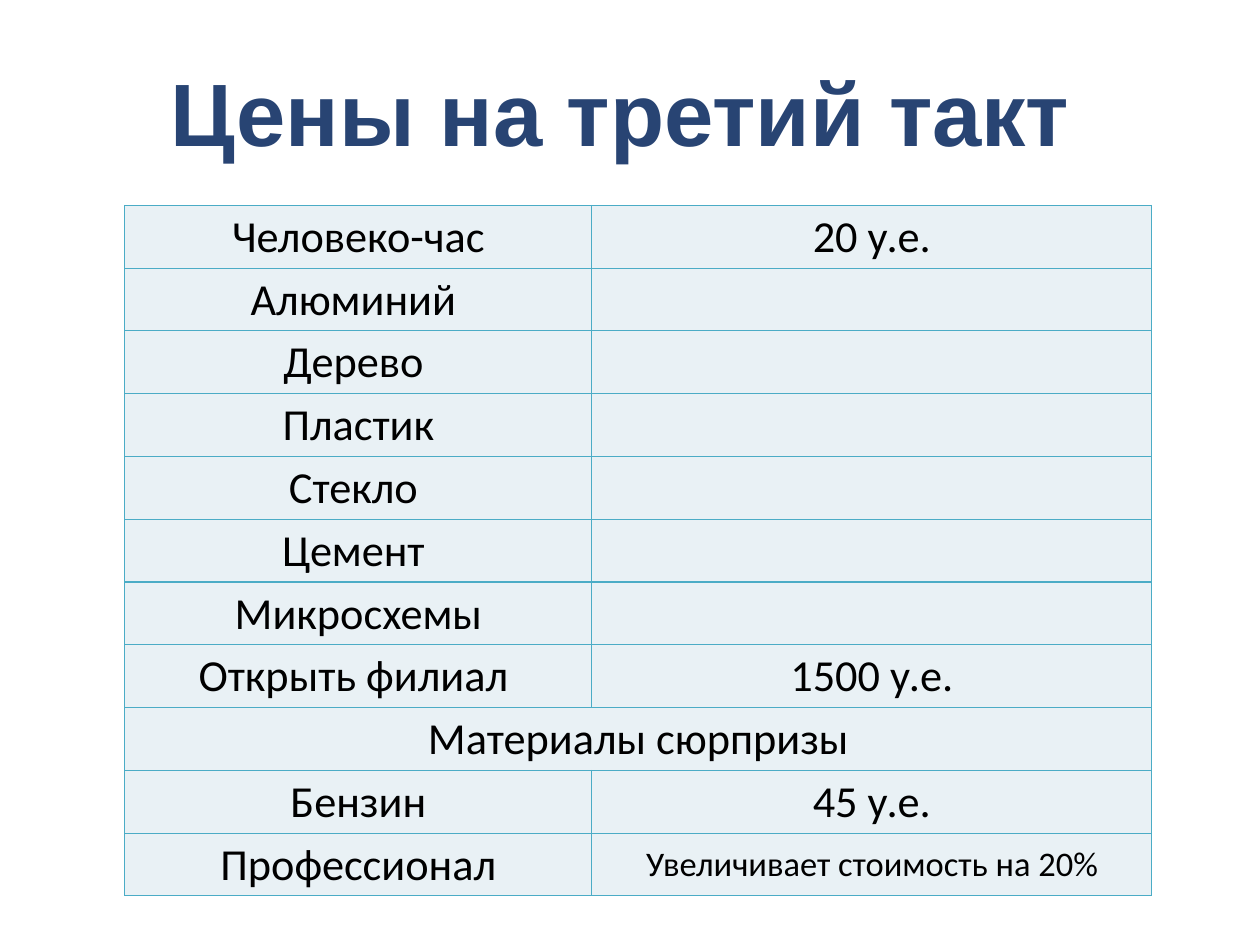
from lxml.etree import SubElement as Sub
from pptx import Presentation
from pptx.dml.color import RGBColor as Rgb
from pptx.enum.text import MSO_ANCHOR as Anchor, MSO_AUTO_SIZE as Fit, PP_ALIGN as Align
from pptx.oxml.ns import qn
from pptx.util import Cm, Pt

COLORS = {"title": "284473", "text": "000000", "cell": "E9F1F5", "line": "4BACC6"}

# Each row holds a good and its price; a row of one text spans the table
PRICES = [
    ("Человеко-час", "20 у.е."),
    ("Алюминий ", ""),
    ("Дерево ", ""),
    ("Пластик", ""),
    ("Стекло ", ""),
    ("Цемент ", ""),
    ("Микросхемы", ""),
    ("Открыть филиал ", "1500 у.е."),
    ("Материалы сюрпризы",),
    ("Бензин", "45 у.е."),
    ("Профессионал", "Увеличивает стоимость на 20%"),
]
WIDTHS = (13.39, 16.05)
ROW = 1.8
NOTE = PRICES[-1][1]


def color(name):
    return Rgb.from_string(COLORS[name])


def write(frame, text, size=36, face="Calibri", tone="text", bold=False):
    para = frame.paragraphs[0]
    para.alignment = Align.CENTER
    run = para.add_run()
    run.text = text
    font = run.font
    font.size, font.name, font.bold = Pt(size), face, bold
    font.color.rgb = color(tone)


def pad(box, side, top, base):
    box.margin_left = box.margin_right = Cm(side)
    box.margin_top, box.margin_bottom = Cm(top), Cm(base)
    box.vertical_anchor = Anchor.MIDDLE


def border(cell):
    props = cell._tc.get_or_add_tcPr()
    for side in ("lnL", "lnR", "lnT", "lnB"):
        line = Sub(props, qn(f"a:{side}"), w=str(Pt(1)))
        fill = Sub(line, qn("a:solidFill"))
        Sub(fill, qn("a:srgbClr"), val=COLORS["line"])


def style(cell):
    pad(cell, 0.03, 0.03, 0)
    border(cell)
    cell.fill.solid()
    cell.fill.fore_color.rgb = color("cell")


def add_title(slide, text):
    title = slide.shapes.title
    title.left, title.top = Cm(2.72), Cm(0.79)
    title.width, title.height = Cm(30.84), Cm(4.78)
    frame = title.text_frame
    frame.auto_size = Fit.NONE
    pad(frame, 0.36, 0.18, 0.18)
    write(frame, text, size=72, face="Arial", tone="title", bold=True)


def add_prices(slide):
    count = len(PRICES)
    table = slide.shapes.add_table(
        count, len(WIDTHS), Cm(3.58), Cm(5.89), Cm(sum(WIDTHS)), Cm(ROW * count)
    ).table
    table.first_row = table.horz_banding = False
    for col, width in zip(table.columns, WIDTHS):
        col.width = Cm(width)
    for row, texts in zip(table.rows, PRICES):
        row.height = Cm(ROW)
        for cell in row.cells:
            style(cell)
        if len(texts) == 1:
            row.cells[0].merge(row.cells[1])
        for cell, text in zip(row.cells, texts):
            if text:
                write(cell.text_frame, text, size=28 if text == NOTE else 36)


def main():
    deck = Presentation()
    deck.slide_width, deck.slide_height = Cm(36.12), Cm(27.1)
    slide = deck.slides.add_slide(deck.slide_layouts[5])
    add_title(slide, "Цены на третий такт ")
    add_prices(slide)
    deck.save("out.pptx")


if __name__ == "__main__":
    main()
